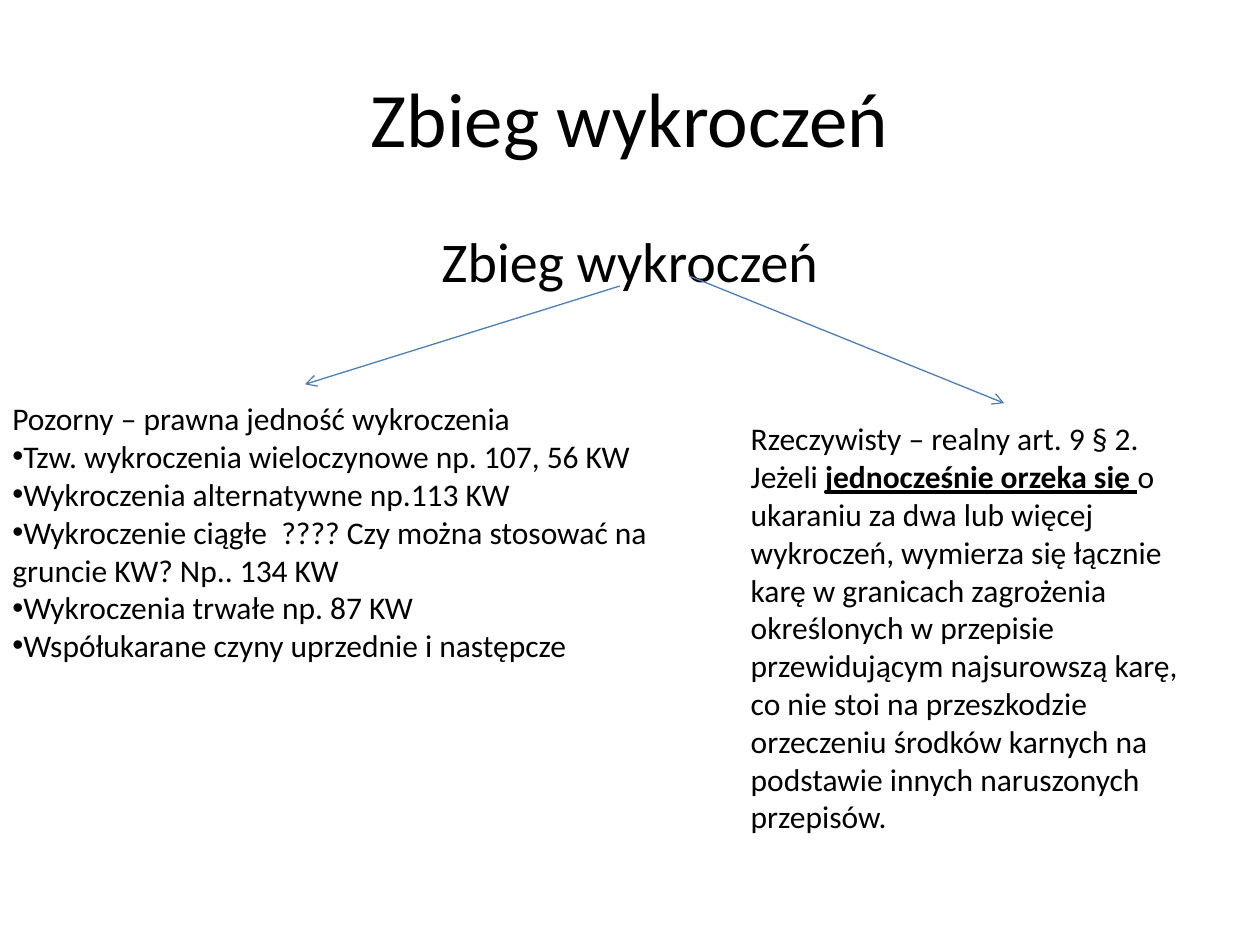
from typing import NamedTuple

from lxml import etree
from pptx import Presentation
from pptx.dml.color import RGBColor
from pptx.enum.shapes import MSO_CONNECTOR
from pptx.enum.text import MSO_ANCHOR, PP_ALIGN
from pptx.oxml.ns import qn
from pptx.util import Inches, Pt

STRAIGHT = MSO_CONNECTOR.STRAIGHT
TOP, MIDDLE = MSO_ANCHOR.TOP, MSO_ANCHOR.MIDDLE
LEFT, CENTER = PP_ALIGN.LEFT, PP_ALIGN.CENTER
FONT = "Calibri"
COLORS = {"text": "000000", "arrow": "4B7EBC"}


class Box(NamedTuple):
    left: float
    top: float
    width: float
    height: float


class Arrow(NamedTuple):
    start: tuple[float, float]
    end: tuple[float, float]


class Phrase(NamedTuple):
    text: str
    stressed: bool = False


class Line(NamedTuple):
    phrases: list[Phrase]
    bullet: bool = False


HEADING = [Line([Phrase("Zbieg wykroczeń")])]
APPARENT = [Line([Phrase("Pozorny – prawna jedność wykroczenia")])] + [
    Line([Phrase(kind)], bullet=True)
    for kind in (
        "Tzw. wykroczenia wieloczynowe np. 107, 56 KW",
        "Wykroczenia alternatywne np.113 KW",
        "Wykroczenie ciągłe  ???? Czy można stosować na gruncie KW? Np.. 134 KW",
        "Wykroczenia trwałe np. 87 KW",
        "Współukarane czyny uprzednie i następcze",
    )
]
REAL = [Line([
    Phrase("Rzeczywisty – realny art. 9 § 2. Jeżeli "),
    Phrase("jednocześnie orzeka się ", stressed=True),
    Phrase("o ukaraniu za dwa lub więcej wykroczeń, wymierza się łącznie karę "
           "w granicach zagrożenia określonych w przepisie przewidującym "
           "najsurowszą karę, co nie stoi na przeszkodzie orzeczeniu środków "
           "karnych na podstawie innych naruszonych przepisów."),
])]
ARROWS = [
    Arrow((4.92, 2.27), (2.42, 3.05)),
    Arrow((5.47, 2.19), (7.97, 3.2)),
]


def add_bullet(paragraph) -> None:
    properties = paragraph._p.get_or_add_pPr()
    etree.SubElement(properties, qn("a:buFont"), typeface="Arial")
    etree.SubElement(properties, qn("a:buChar"), char="•")


def add_text(slide, box: Box, lines: list[Line], *, size: float = 18,
             align=LEFT, anchor=TOP) -> None:
    frame = slide.shapes.add_textbox(*map(Inches, box)).text_frame
    frame.word_wrap = True
    frame.vertical_anchor = anchor
    for index, line in enumerate(lines):
        paragraph = frame.add_paragraph() if index else frame.paragraphs[0]
        paragraph.alignment = align
        if line.bullet:
            add_bullet(paragraph)
        for phrase in line.phrases:
            run = paragraph.add_run()
            run.text = phrase.text
            run.font.name = FONT
            run.font.size = Pt(size)
            run.font.bold = run.font.underline = phrase.stressed
            run.font.color.rgb = RGBColor.from_string(COLORS["text"])


def add_arrow(slide, arrow: Arrow) -> None:
    connector = slide.shapes.add_connector(
        STRAIGHT, *map(Inches, arrow.start + arrow.end))
    connector.line.color.rgb = RGBColor.from_string(COLORS["arrow"])
    connector.line.width = Pt(0.75)
    properties = connector._element.spPr
    etree.SubElement(properties.find(qn("a:ln")), qn("a:tailEnd"), type="arrow")
    etree.SubElement(properties, qn("a:effectLst"))


def main() -> None:
    """Build the slide on concurrent offences and save it."""
    deck = Presentation()
    deck.slide_width, deck.slide_height = Inches(10), Inches(7.5)
    slide = deck.slides.add_slide(deck.slide_layouts[6])
    add_text(slide, Box(0.5, 0.3, 9, 1.25), HEADING,
             size=44, align=CENTER, anchor=MIDDLE)
    add_text(slide, Box(0.5, 1.75, 9, 4.95), HEADING, size=32, align=CENTER)
    for arrow in ARROWS:
        add_arrow(slide, arrow)
    add_text(slide, Box(0, 3.12, 5.7, 2.52), APPARENT)
    add_text(slide, Box(5.86, 3.28, 3.75, 3.74), REAL)
    deck.save("out.pptx")


if __name__ == "__main__":
    main()
